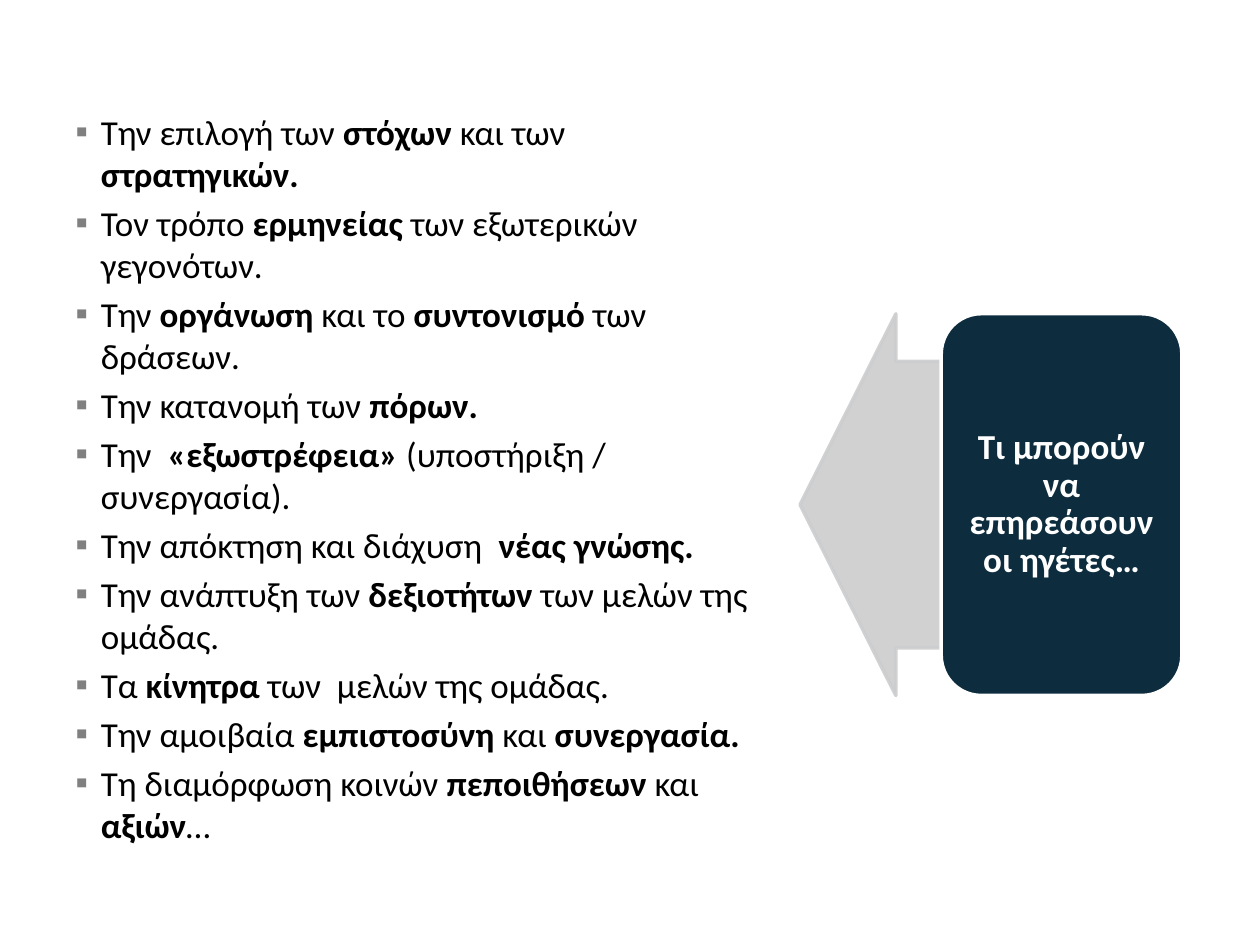
from dataclasses import dataclass

from lxml import etree
from pptx import Presentation
from pptx.dml.color import RGBColor
from pptx.enum.shapes import MSO_SHAPE
from pptx.enum.text import MSO_ANCHOR, MSO_AUTO_SIZE, PP_ALIGN
from pptx.oxml.ns import qn
from pptx.util import Inches, Pt

ARROW, ROUNDED = MSO_SHAPE.RIGHT_ARROW, MSO_SHAPE.ROUNDED_RECTANGLE
MIDDLE, CENTER = MSO_ANCHOR.MIDDLE, PP_ALIGN.CENTER
NO_FIT = MSO_AUTO_SIZE.NONE
TITLE_AND_CONTENT = 1


@dataclass(frozen=True)
class Theme:
    font: str = "Calibri"
    size: int = 20
    text: str = "000000"
    bullet: str = "808080"
    arrow: str = "CCCDCE"
    panel: str = "0D2C3E"
    light: str = "FFFFFF"
    line_width: int = 2


# Each point is a list of fragments; those between asterisks are bold.
INFLUENCES = [
    "Την επιλογή των *στόχων *και των *στρατηγικών.*",
    "Τον τρόπο *ερμηνείας* των εξωτερικών γεγονότων.",
    "Την *οργάνωση* και το *συντονισμό* των δράσεων.",
    "Την κατανομή των *πόρων.*",
    "Την  *«εξωστρέφεια» *(υποστήριξη / συνεργασία).",
    "Την απόκτηση και διάχυση  *νέας γνώσης.*",
    "Την ανάπτυξη των *δεξιοτήτων* των μελών της ομάδας.",
    "Τα *κίνητρα* των  μελών της ομάδας.",
    "Την αμοιβαία *εμπιστοσύνη* και *συνεργασία.*",
    "Τη διαμόρφωση κοινών *πεποιθήσεων* και *αξιών*…",
]
QUESTION = "Τι μπορούν να επηρεάσουν οι ηγέτες…"


class SlideBuilder:
    def __init__(self, theme):
        self.theme = theme
        self.deck = Presentation()
        self.deck.slide_width, self.deck.slide_height = Inches(10), Inches(7.5)
        layout = self.deck.slide_layouts[TITLE_AND_CONTENT]
        self.slide = self.deck.slides.add_slide(layout)
        title = self.slide.shapes.title
        title.element.getparent().remove(title.element)

    def add_run(self, paragraph, text, color, bold):
        run = paragraph.add_run()
        run.text = text
        run.font.name = self.theme.font
        run.font.size = Pt(self.theme.size)
        run.font.bold = bold
        run.font.color.rgb = RGBColor.from_string(color)

    def set_bullet(self, paragraph):
        properties = paragraph._p.get_or_add_pPr()
        properties.set("marL", str(Inches(0.2)))
        properties.set("indent", str(-Inches(0.2)))
        color = etree.SubElement(properties, qn("a:buClr"))
        etree.SubElement(color, qn("a:srgbClr"), val=self.theme.bullet)
        etree.SubElement(properties, qn("a:buFont"), typeface=self.theme.font)
        etree.SubElement(properties, qn("a:buChar"), char="▪")

    def bullet_list(self, points, left, top, width, height):
        body = self.slide.placeholders[1]
        body.left, body.top = Inches(left), Inches(top)
        body.width, body.height = Inches(width), Inches(height)
        frame = body.text_frame
        frame.auto_size = NO_FIT
        frame.vertical_anchor = MIDDLE
        frame.margin_bottom = Inches(0.25)
        for number, point in enumerate(points):
            paragraph = frame.add_paragraph() if number else frame.paragraphs[0]
            self.set_bullet(paragraph)
            paragraph.space_before = Pt(4 if number else 0)
            for position, fragment in enumerate(point.split("*")):
                if fragment:
                    self.add_run(paragraph, fragment, self.theme.text, position % 2 == 1)

    def block(self, preset, left, top, width, height, fill, line):
        shape = self.slide.shapes.add_shape(
            preset, Inches(left), Inches(top), Inches(width), Inches(height))
        shape.shadow.inherit = False
        shape.fill.solid()
        shape.fill.fore_color.rgb = RGBColor.from_string(fill)
        shape.line.color.rgb = RGBColor.from_string(line)
        shape.line.width = Pt(self.theme.line_width)
        return shape

    def left_arrow(self, left, top, width, height, opacity):
        color = self.theme.arrow
        arrow = self.block(ARROW, left, top, width, height, color, color)
        arrow.rotation = 180
        arrow.adjustments[0], arrow.adjustments[1] = 0.75, 0.5
        for value in arrow.element.spPr.iter(qn("a:srgbClr")):
            etree.SubElement(value, qn("a:alpha"), val=str(opacity * 1000))

    def panel(self, text, left, top, width, height):
        panel = self.block(ROUNDED, left, top, width, height,
                           self.theme.panel, self.theme.light)
        frame = panel.text_frame
        frame.word_wrap = True
        frame.vertical_anchor = MIDDLE
        frame.margin_left = frame.margin_right = Inches(0.08)
        frame.margin_top = frame.margin_bottom = Inches(0.04)
        paragraph = frame.paragraphs[0]
        paragraph.alignment = CENTER
        paragraph.line_spacing = 0.9
        self.add_run(paragraph, text, self.theme.light, True)


def main():
    builder = SlideBuilder(Theme())
    builder.bullet_list(INFLUENCES, 0.5, 0.5, 5.6, 6.79)
    builder.left_arrow(6.35, 2.49, 1.52, 3.03, opacity=90)
    builder.panel(QUESTION, 7.47, 2.49, 1.91, 3.03)
    builder.deck.save("out.pptx")


if __name__ == "__main__":
    main()
